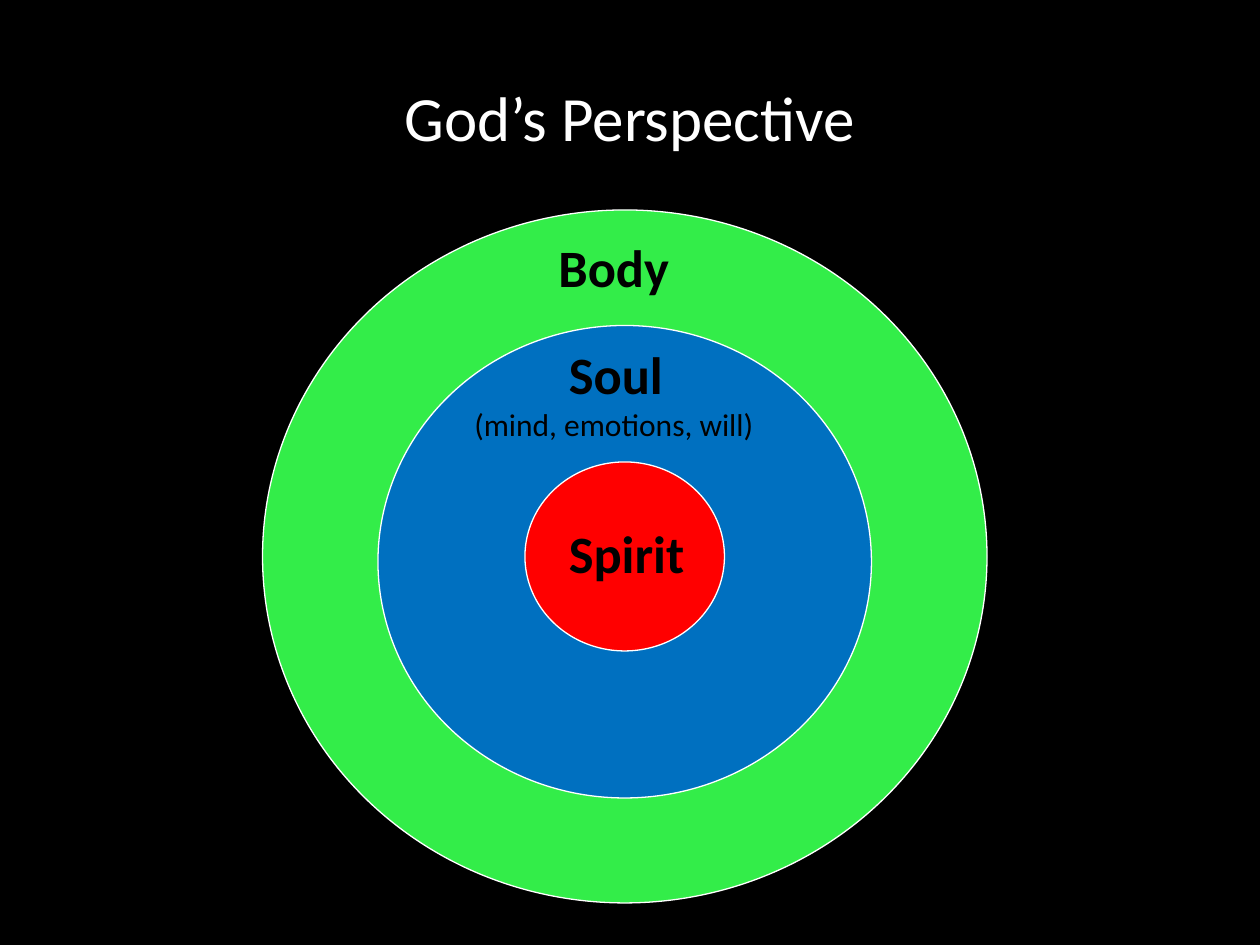
from pptx import Presentation
from pptx.dml.color import RGBColor
from pptx.enum.shapes import MSO_SHAPE
from pptx.enum.text import MSO_ANCHOR, PP_ALIGN
from pptx.util import Inches, Pt

COLS, ROWS = 120, 90
CELL = Inches(10) // COLS

RINGS = [
    ((0, 0, 69, 66), "33ED49"),
    ((11, 11, 47, 45), "0070C0"),
    ((25, 24, 19, 18), "FF0000"),
]
LABELS = [
    ("Spirit", (28, 29, 18, 7.2), 30, True),
    ("Soul", (28, 12, 14, 7.2), 30, True),
    ("Body", (27, 1.8, 15, 7.2), 30, True),
    ("(mind, emotions, will)", (19, 18, 41, 4.8), 18, False),
]


def rgb(value):
    return RGBColor.from_string(value)


def cells(*box):
    return [round(n * CELL) for n in box]


def within(box, part):
    return box[0] + part[0], box[1] + part[1], part[2], part[3]


def add_text(s, box, text, size, color, bold=False,
             align=PP_ALIGN.LEFT, anchor=MSO_ANCHOR.TOP):
    tf = s.shapes.add_textbox(*cells(*box)).text_frame
    tf.word_wrap = True
    tf.vertical_anchor = anchor
    p = tf.paragraphs[0]
    p.text = text
    p.alignment = align
    p.font.name = "Calibri"
    p.font.size = Pt(size)
    p.font.bold = bold
    p.font.color.rgb = rgb(color)


def add_title(s, box):
    add_text(s, box, "God’s Perspective", 36, "FFFFFF",
             align=PP_ALIGN.CENTER, anchor=MSO_ANCHOR.MIDDLE)


def add_rings(s, box):
    for part, color in RINGS:
        sp = s.shapes.add_shape(MSO_SHAPE.OVAL, *cells(*within(box, part)))
        sp.shadow.inherit = False
        sp.fill.solid()
        sp.fill.fore_color.rgb = rgb(color)
        sp.line.color.rgb = rgb("FFFFFF")
        sp.line.width = Pt(0.75)
    for text, part, size, bold in LABELS:
        add_text(s, within(box, part), text, size, "000000", bold)


def main():
    prs = Presentation()
    prs.slide_width, prs.slide_height = cells(COLS, ROWS)
    s = prs.slides.add_slide(prs.slide_layouts[6])
    s.background.fill.solid()
    s.background.fill.fore_color.rgb = rgb("000000")
    add_title(s, (6, 3.6, 108, 15))
    add_rings(s, (25, 20, 69, 66))
    prs.save("out.pptx")


if __name__ == "__main__":
    main()
